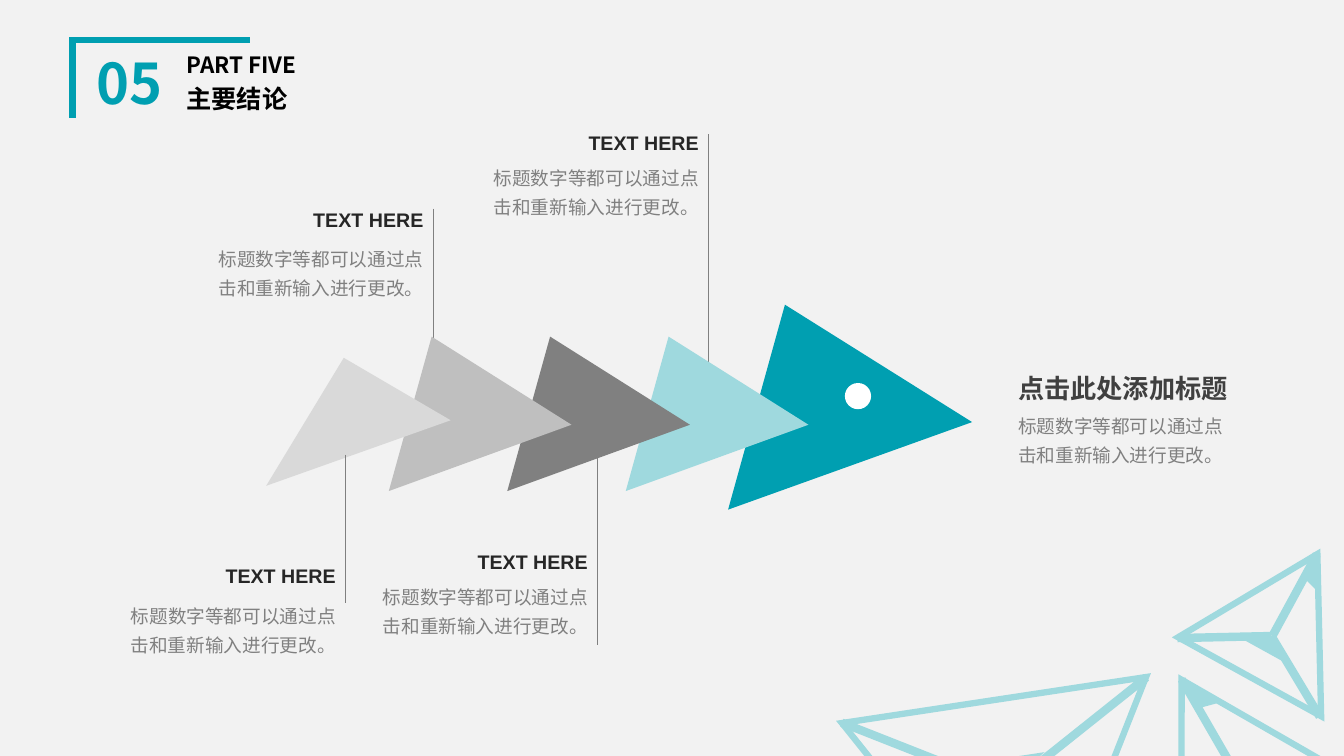
from dataclasses import dataclass

from lxml.etree import SubElement
from pptx import Presentation
from pptx.dml.color import RGBColor
from pptx.enum.shapes import MSO_CONNECTOR, MSO_SHAPE
from pptx.enum.text import MSO_ANCHOR, MSO_AUTO_SIZE, PP_ALIGN
from pptx.oxml.ns import qn
from pptx.util import Inches, Pt


@dataclass(frozen=True)
class Theme:
    background: str = "F2F2F2"
    teal: str = "009FB1"
    pale_teal: str = "9FD9DE"
    gray: str = "808080"
    mid_gray: str = "BFBFBF"
    light_gray: str = "D9D9D9"
    white: str = "FFFFFF"
    black: str = "000000"
    heading: str = "262626"
    conclusion: str = "404040"
    latin_font: str = "Arial"
    chinese_font: str = "Noto Sans CJK SC"
    number_size: float = 40
    part_size: float = 16
    title_size: float = 18
    heading_size: float = 14
    body_size: float = 13.3
    conclusion_size: float = 18.7
    frame_line: float = 4.5
    spoke_line: float = 6
    thin_line: float = 0.75


THEME = Theme()

NUMBER, PART, TITLE = "05", "PART FIVE", "主要结论"
HEADING = "TEXT HERE"
DESCRIPTION = "标题数字等都可以通过点击和重新输入进行更改。"
CONCLUSION = "点击此处添加标题"

CALLOUTS = [
    {"x": 7.03, "line": (1.33, 3.64), "heading": 1.25, "body": 1.54},
    {"x": 4.3, "line": (2.07, 3.54), "heading": 2.01, "body": 2.34},
    {"x": 5.93, "line": (4.52, 6.4), "heading": 5.41, "body": 5.7},
    {"x": 3.43, "line": (4.51, 5.98), "heading": 5.55, "body": 5.89},
]
HEADING_BOX = (1.64, 0.33)
BODY_BOX = (2.34, 0.68)

HEAD_ARROW = (7.46, 3.27, 2.11, 2.1)
ARROW_START, ARROW_STEP = 4.03, 1.175
ARROW_COLORS = [THEME.mid_gray, THEME.gray, THEME.pale_teal]
ARROW_ANGLE, ARROW_PEAK = 105.5, 0.297
TAIL_ARROW = [(3.41, 3.55), (4.47, 4.17), (2.64, 4.82)]
FRAME = [(0.72, 1.17), (0.72, 0.4), (2.48, 0.4)]

CRYSTALS = [
    {
        "outline": (8.53, 6.93, 3.05, 2.63), "angle": 171.4,
        "spokes": [((11.37, 6.72), (9.99, 7.82)), ((8.35, 7.17), (10, 7.82))],
        "hub": (9.57, 7.53, 0.79, 0.24), "facet": None,
    },
    {
        "outline": (11.16, 6.63, 1.97, 1.7), "angle": 330,
        "spokes": [((11.72, 6.74), (12.28, 7.71))],
        "hub": None, "facet": [(11.92, 7.01), (12.07, 6.97), (11.81, 6.82)],
    },
    {
        "outline": (11.92, 5.41, 1.62, 1.39), "angle": 28.9,
        "spokes": [((13.06, 5.5), (12.62, 6.31)), ((11.68, 6.33), (12.61, 6.31)),
                   ((13.09, 7.11), (12.61, 6.31))],
        "hub": (12.36, 6.33, 0.42, 0.13),
        "facet": [(12.96, 5.75), (13.05, 5.84), (13.04, 5.6)],
    },
]


def inches(values):
    return [Inches(value) for value in values]


def paint(shape, fill=None, line=None, width=1):
    shape.shadow.inherit = False
    if fill:
        shape.fill.solid()
        shape.fill.fore_color.rgb = RGBColor.from_string(fill)
    else:
        shape.fill.background()
    if line:
        shape.line.color.rgb = RGBColor.from_string(line)
        shape.line.width = Pt(width)
        outline = shape.line._get_or_add_ln()
        SubElement(outline, qn("a:miter")).set("lim", "800000")
    else:
        shape.line.fill.background()


def add_preset(slide, kind, box, angle=0, peak=None, **colors):
    shape = slide.shapes.add_shape(kind, *inches(box))
    shape.rotation = angle
    if peak is not None:
        shape.adjustments[0] = peak
    paint(shape, **colors)


def add_outline(slide, points, close, **colors):
    corners = [tuple(inches(point)) for point in points]
    builder = slide.shapes.build_freeform(*corners[0])
    builder.add_line_segments(corners[1:], close=close)
    paint(builder.convert_to_shape(), **colors)


def add_line(slide, start, end, color, width):
    connector = slide.shapes.add_connector(MSO_CONNECTOR.STRAIGHT, *inches(start + end))
    connector.line.color.rgb = RGBColor.from_string(color)
    connector.line.width = Pt(width)
    SubElement(connector._element.spPr, qn("a:effectLst"))


def write(shape, text, size, color, bold=False, font=THEME.chinese_font,
          align=PP_ALIGN.LEFT, spacing=1.0, anchor=MSO_ANCHOR.TOP, wrap=True):
    frame = shape.text_frame
    frame.word_wrap = wrap
    frame.auto_size = MSO_AUTO_SIZE.NONE
    frame.vertical_anchor = anchor
    paragraph = frame.paragraphs[0]
    paragraph.alignment = align
    paragraph.line_spacing = spacing
    paragraph.space_before = Pt(0)
    run = paragraph.add_run()
    run.text = text
    run.font.size = Pt(size)
    run.font.bold = bold
    run.font.color.rgb = RGBColor.from_string(color)
    run.font.name = font
    SubElement(run.font._element, qn("a:ea")).set("typeface", font)


def add_text(slide, box, text, size, color, **options):
    write(slide.shapes.add_textbox(*inches(box)), text, size, color, **options)


def fill_placeholder(placeholder, box, text, size, color, align=PP_ALIGN.LEFT):
    placeholder.left, placeholder.top, placeholder.width, placeholder.height = inches(box)
    write(placeholder, text, size, color, bold=True, align=align, spacing=0.9,
          anchor=MSO_ANCHOR.MIDDLE)


def add_header(slide):
    placeholders = {item.placeholder_format.idx: item for item in slide.placeholders}
    fill_placeholder(placeholders.pop(1), (0.82, 0.49, 0.93, 0.73), NUMBER,
                     THEME.number_size, THEME.teal, PP_ALIGN.CENTER)
    fill_placeholder(placeholders.pop(3), (1.75, 0.49, 2.67, 0.34), PART,
                     THEME.part_size, THEME.black)
    fill_placeholder(placeholders.pop(0), (1.75, 0.78, 2.67, 0.44), TITLE,
                     THEME.title_size, THEME.black)
    for unused in placeholders.values():
        unused._element.getparent().remove(unused._element)
    add_outline(slide, FRAME, False, line=THEME.teal, width=THEME.frame_line)


def add_crystal(slide, crystal):
    solid = {"fill": THEME.pale_teal, "line": THEME.pale_teal}
    add_preset(slide, MSO_SHAPE.ISOSCELES_TRIANGLE, crystal["outline"], crystal["angle"],
               fill=THEME.background, line=THEME.pale_teal, width=THEME.frame_line)
    for start, end in crystal["spokes"]:
        add_line(slide, start, end, THEME.pale_teal, THEME.spoke_line)
    if crystal["hub"]:
        add_preset(slide, MSO_SHAPE.ISOSCELES_TRIANGLE, crystal["hub"], crystal["angle"], **solid)
    if crystal["facet"]:
        add_outline(slide, crystal["facet"], True, **solid)


def add_arrows(slide):
    arrows = [((ARROW_START + index * ARROW_STEP, 3.53, 1.59, 1.57), color)
              for index, color in enumerate(ARROW_COLORS)]
    arrows.append((HEAD_ARROW, THEME.teal))
    for box, color in reversed(arrows):
        add_preset(slide, MSO_SHAPE.ISOSCELES_TRIANGLE, box, ARROW_ANGLE, ARROW_PEAK, fill=color)
    add_outline(slide, TAIL_ARROW, True, fill=THEME.light_gray)
    add_preset(slide, MSO_SHAPE.OVAL, (8.38, 3.8, 0.26, 0.26), fill=THEME.white)


def add_callout(slide, callout):
    x = callout["x"]
    add_text(slide, (x - HEADING_BOX[0], callout["heading"], *HEADING_BOX), HEADING,
             THEME.heading_size, THEME.heading, bold=True, font=THEME.latin_font,
             align=PP_ALIGN.RIGHT)
    add_text(slide, (x - BODY_BOX[0], callout["body"], *BODY_BOX), DESCRIPTION,
             THEME.body_size, THEME.gray, align=PP_ALIGN.RIGHT, spacing=1.3)


def main():
    presentation = Presentation()
    presentation.slide_width, presentation.slide_height = inches((13.33, 7.5))
    slide = presentation.slides.add_slide(presentation.slide_layouts.get_by_name("Comparison"))
    slide.background.fill.solid()
    slide.background.fill.fore_color.rgb = RGBColor.from_string(THEME.background)
    add_header(slide)
    for crystal in CRYSTALS:
        add_crystal(slide, crystal)
    for callout in CALLOUTS[:2]:
        add_line(slide, (callout["x"], callout["line"][0]), (callout["x"], callout["line"][1]),
                 THEME.gray, THEME.thin_line)
    add_arrows(slide)
    for callout in CALLOUTS[2:]:
        add_line(slide, (callout["x"], callout["line"][0]), (callout["x"], callout["line"][1]),
                 THEME.gray, THEME.thin_line)
    for callout in CALLOUTS:
        add_callout(slide, callout)
    add_text(slide, (10, 3.64, 2.27, 0.41), CONCLUSION, THEME.conclusion_size,
             THEME.conclusion, bold=True, wrap=False)
    add_text(slide, (10, 4, 2.29, 0.68), DESCRIPTION, THEME.body_size, THEME.gray, spacing=1.3)
    presentation.save("out.pptx")


if __name__ == "__main__":
    main()
